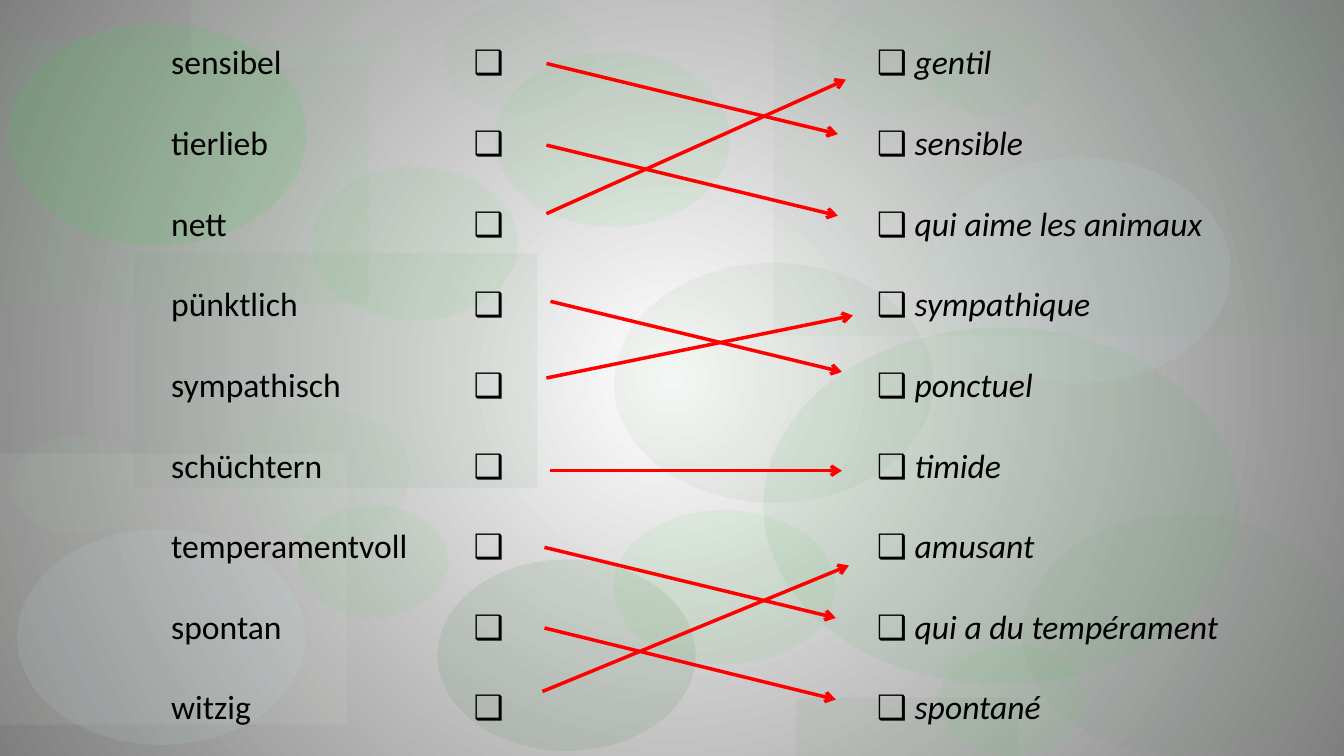
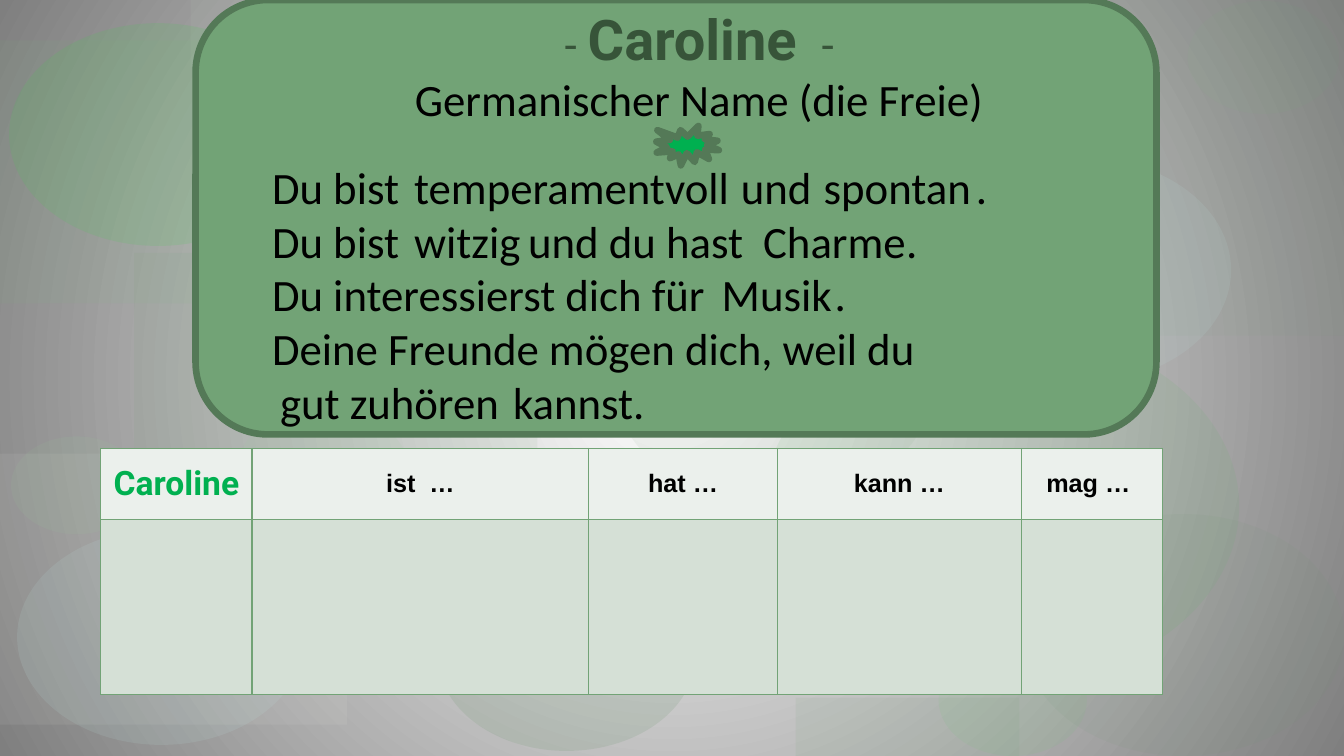
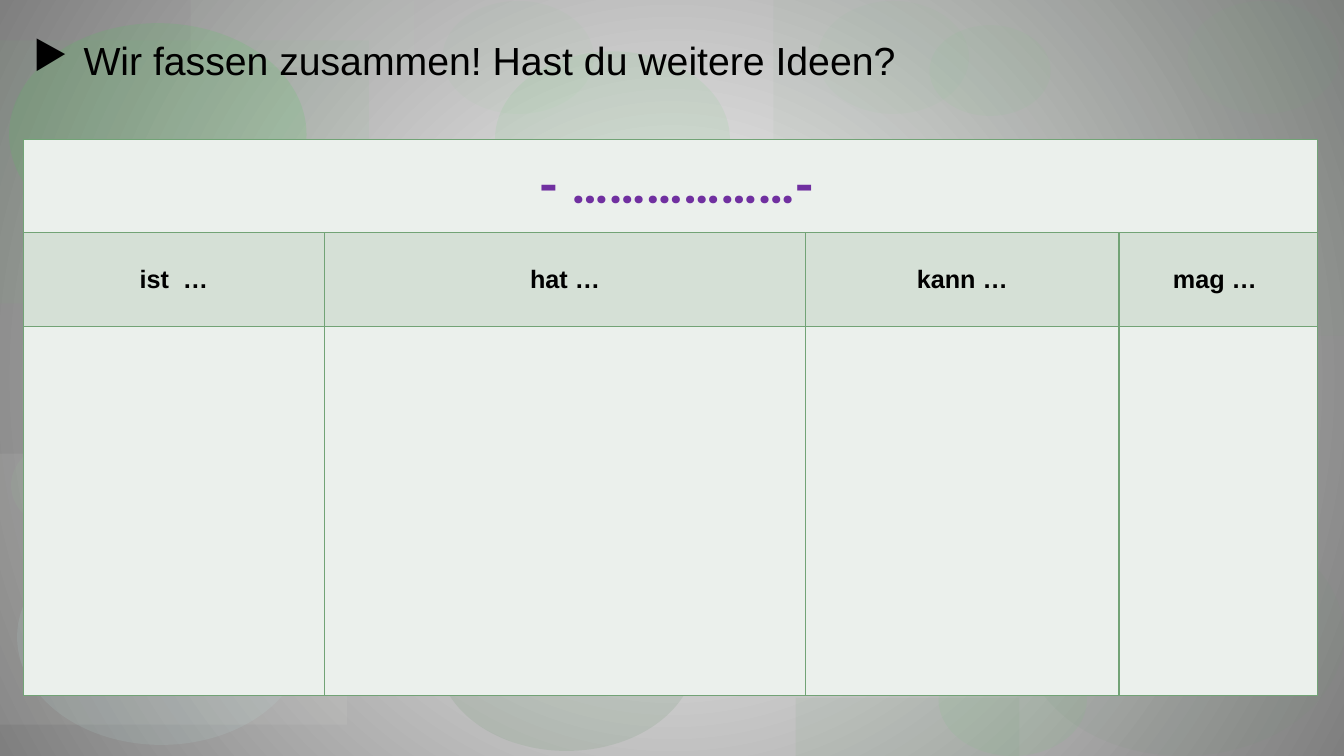
import dataclasses

import lxml.etree
import pptx
import pptx.dml.color
import pptx.enum.shapes
import pptx.enum.text
import pptx.oxml.ns
import pptx.util

EMU_PER_PX = 9144
SHAPES = pptx.enum.shapes.MSO_SHAPE
CENTER = pptx.enum.text.PP_ALIGN.CENTER


@dataclasses.dataclass(frozen=True)
class Style:
    """Look of one run of text."""
    size: int
    font: str
    color: str = "000000"
    bold: bool = False
    italic: bool = False


@dataclasses.dataclass(frozen=True)
class Para:
    """One paragraph: runs of (text, style), spacing in points, stops in px."""
    runs: tuple
    align: object = None
    after: float = 0
    stops: tuple = ()
    bullet: str = ""
    indent: int = 0


class Theme:
    """Colours and type sizes of the deck."""
    glow, shade = "FFFFFF", "7F7F7F"
    green, green_dark, seal = "72A376", "547957", "00B050"
    cell_light, cell_dark = "EBF0EC", "D5E0D6"
    arrow = "FF0000"
    arrow_width, outline_width, border_width = 2.5, 4.72, 1
    word = Style(24, "Calibri")
    translation = Style(24, "Calibri", italic=True)
    sentence = Style(32, "Calibri")
    dash = Style(32, "Calibri", "375439")
    name = Style(40, "Roboto", "375439", bold=True)
    table_name = Style(24, "Roboto", "00B050", bold=True)
    blank_name = Style(36, "Roboto", "7030A0", bold=True)
    column_head = Style(18, "Arial", bold=True)
    task = Style(28, "Arial")


BACKDROP = (
    ("rect", 133, 251, 400, 233, "72A376", 9),
    ("oval", 434, 555, 256, 190, "548958", 13),
    ("rect", 767, 0, 566, 333, "72A376", 6),
    ("rect", 0, 450, 344, 269, "F3F3EC", 8),
    ("oval", 609, 261, 317, 238, "709873", 8),
    ("oval", 931, 639, 147, 111, "68D070", 9),
    ("oval", 922, 156, 299, 224, "C1E8E4", 11),
    ("oval", 17, 525, 286, 214, "C1E8E4", 12),
    ("oval", 295, 501, 150, 112, "68D070", 9),
    ("oval", 608, 506, 221, 153, "47CE52", 8),
    ("rect", 0, 40, 366, 261, "77C27C", 7),
    ("rect", 189, 0, 222, 67, "BCCEBD", 10),
    ("oval", 9, 23, 295, 221, "47CE52", 15),
    ("oval", 11, 433, 130, 97, "98CD9C", 10),
    ("oval", 309, 165, 205, 153, "68D070", 9),
    ("oval", 491, 51, 233, 174, "47CE52", 8),
    ("oval", 757, 325, 472, 354, "5EB766", 10),
    ("oval", 811, 1, 150, 112, "68D070", 4),
    ("oval", 1014, 510, 319, 240, "709873", 8),
    ("oval", 233, 405, 174, 131, "98CD9C", 10),
    ("oval", 922, 25, 120, 90, "68D070", 6),
    ("oval", 1178, 1, 150, 112, "68D070", 4),
    ("rect", 789, 692, 222, 58, "72A376", 10),
    ("oval", 439, 1, 150, 112, "68D070", 4),
)
WORD_PAIRS = (
    ("sensibel", "gentil"),
    ("tierlieb", "sensible"),
    ("nett", "qui aime les animaux"),
    ("pünktlich", "sympathique"),
    ("sympathisch", "ponctuel"),
    ("schüchtern", "timide"),
    ("temperamentvoll", "amusant"),
    ("spontan", "qui a du tempérament"),
    ("witzig", "spontané"),
)
MATCHES = (
    (542, 63, 831, 133), (542, 144, 831, 214), (542, 212, 839, 79),
    (546, 299, 835, 369), (542, 375, 846, 313), (546, 467, 835, 467),
    (540, 543, 829, 613), (540, 623, 829, 694), (538, 686, 842, 561),
)
SENTENCES = (
    ("Du bist\tund\t.", (465, 698)),
    ("Du bist\tund du hast\t.", (254, 629)),
    ("Du interessierst dich für\t.", (558,)),
    ("Deine Freunde mögen dich, weil du", ()),
    ("\tkannst.", (239,)),
)
ANSWERS = (
    ("gut zuhören", 268, 367, 250), ("temperamentvoll", 401, 154, 367),
    ("spontan", 807, 154, 172), ("witzig", 401, 207, 141),
    ("Charme", 747, 207, 172), ("Musik", 706, 260, 141),
)
TRAIT_HEADS = ("ist  …", "hat …", "kann …", "mag … ")


def px(length):
    """Turn px into EMU."""
    return pptx.util.Emu(length * EMU_PER_PX)


def rgb(color):
    """Turn a hex string into a colour."""
    return pptx.dml.color.RGBColor.from_string(color)


def child(parent, tag, **attributes):
    """Append an XML element to parent."""
    return lxml.etree.SubElement(parent, pptx.oxml.ns.qn(tag), attributes)


class Deck:
    """Holds the theme, the presentation and the current slide."""

    def __init__(self, theme):
        self.theme = theme
        self.presentation = pptx.Presentation()
        self.presentation.slide_width = px(1333)
        self.presentation.slide_height = px(750)
        self.slide = None

    def new_slide(self):
        """Start a blank slide."""
        self.slide = self.presentation.slides.add_slide(self.presentation.slide_layouts[6])

    def backdrop(self, spots):
        """Put the gradient and the pale spots on the slide master."""
        master = self.presentation.slide_master
        gradient = master.background.fill
        gradient.gradient()
        for stop, position, color in zip(gradient.gradient_stops, (0, 1),
                                         (self.theme.glow, self.theme.shade)):
            stop.position = position
            stop.color.rgb = rgb(color)
        linear = master.element.xpath(".//p:bg//a:lin")[0]
        radial = child(linear.getparent(), "a:path", path="circle")
        child(radial, "a:fillToRect", l="50000", t="50000", r="50000", b="50000")
        linear.getparent().replace(linear, radial)
        kinds = {"rect": SHAPES.RECTANGLE, "oval": SHAPES.OVAL}
        for number, (kind, left, top, width, height, color, opacity) in enumerate(spots, 100):
            spot = self.shape(kinds[kind], (left, top, width, height), color).element
            child(spot.xpath("./p:spPr/a:solidFill/a:srgbClr")[0], "a:alpha", val=str(opacity * 1000))
            spot.nvSpPr.cNvPr.set("id", str(number))
            master.element.cSld.spTree.append(spot)

    def shape(self, kind, box, fill, outline=None):
        """Add a filled preset shape."""
        shape = self.slide.shapes.add_shape(kind, *map(px, box))
        shape.shadow.inherit = False
        shape.fill.solid()
        shape.fill.fore_color.rgb = rgb(fill)
        if outline:
            shape.line.color.rgb = rgb(outline)
            shape.line.width = pptx.util.Pt(self.theme.outline_width)
        else:
            shape.line.fill.background()
        return shape

    def arrow(self, x1, y1, x2, y2):
        """Add a straight arrow."""
        arrow = self.slide.shapes.add_connector(
            pptx.enum.shapes.MSO_CONNECTOR.STRAIGHT, *map(px, (x1, y1, x2, y2)))
        arrow.line.color.rgb = rgb(self.theme.arrow)
        arrow.line.width = pptx.util.Pt(self.theme.arrow_width)
        child(arrow.element.xpath("./p:spPr/a:ln")[0], "a:tailEnd", type="arrow")
        child(arrow.element.spPr, "a:effectLst")

    def fill_frame(self, frame, paras):
        """Fill a text frame with paragraphs."""
        for index, para in enumerate(paras):
            paragraph = frame.add_paragraph() if index else frame.paragraphs[0]
            paragraph.alignment = para.align
            paragraph.space_before = pptx.util.Pt(0)
            paragraph.space_after = pptx.util.Pt(para.after)
            properties = paragraph._p.get_or_add_pPr()
            if para.bullet:
                properties.set("marL", str(px(para.indent)))
                properties.set("indent", str(px(-para.indent)))
                child(properties, "a:buChar", char=para.bullet)
            if para.stops:
                tabs = child(properties, "a:tabLst")
                for stop in para.stops:
                    child(tabs, "a:tab", pos=str(px(stop)), algn="l")
            for words, style in para.runs:
                run = paragraph.add_run()
                run.text = words
                run.font.size = pptx.util.Pt(style.size)
                run.font.name = style.font
                run.font.color.rgb = rgb(style.color)
                run.font.bold = style.bold
                run.font.italic = style.italic

    def text(self, box, paras):
        """Add a wrapping text box."""
        frame = self.slide.shapes.add_textbox(*map(px, box)).text_frame
        frame.word_wrap = True
        self.fill_frame(frame, paras)

    def table(self, left, top, widths, heights, fills, heads):
        """Add a bordered table; heads holds rows of (text, style)."""
        holder = self.slide.shapes.add_table(
            len(heights), len(widths), px(left), px(top), px(sum(widths)), px(sum(heights)))
        table = holder.table
        for column, width in zip(table.columns, widths):
            column.width = px(width)
        for row, height, fill in zip(table.rows, heights, fills):
            row.height = px(height)
            for cell in row.cells:
                cell.fill.solid()
                cell.fill.fore_color.rgb = rgb(fill)
                cell.vertical_anchor = pptx.enum.text.MSO_ANCHOR.MIDDLE
        for properties in holder.element.xpath(".//a:tcPr"):
            for index, side in enumerate(("a:lnL", "a:lnR", "a:lnT", "a:lnB")):
                border = child(properties, side, w=str(pptx.util.Pt(self.theme.border_width)))
                child(child(border, "a:solidFill"), "a:srgbClr", val=self.theme.green)
                properties.insert(index, border)
        for row, head in enumerate(heads):
            for column, run in enumerate(head):
                self.fill_frame(table.cell(row, column).text_frame, [Para((run,), CENTER)])
        return table


def matching_slide(deck):
    """German words matched with French ones."""
    theme = deck.theme
    deck.text((60, 36, 1213, 714), [
        Para(((f"\t{german}\t❑\t❑ ", theme.word), (french, theme.translation)),
             after=28.8, stops=(100, 400, 800))
        for german, french in WORD_PAIRS])
    for match in MATCHES:
        deck.arrow(*match)


def portrait_slide(deck, trait_heads):
    """Portrait of Caroline with a table to fill in."""
    theme = deck.theme
    deck.shape(SHAPES.ROUNDED_RECTANGLE, (194, 0, 953, 431), theme.green, theme.green_dark)
    title = Para((("- ", theme.dash), ("Caroline ", theme.name), (" -", theme.dash)), CENTER)
    origin = Para((("Germanischer Name (die Freie)", theme.sentence),), CENTER, after=24)
    sentences = [Para(((words, theme.sentence),), stops=stops) for words, stops in SENTENCES]
    deck.text((260, 0, 867, 434), [title, origin, *sentences])
    deck.shape(SHAPES.EXPLOSION1, (651, 125, 62, 39), theme.seal, theme.green_dark)
    deck.table(100, 445, (150, 334, 187, 242, 140), (70, 174),
               (theme.cell_light, theme.cell_dark),
               [[("Caroline", theme.table_name), *trait_heads]])
    for answer, left, top, width in ANSWERS:
        deck.text((left, top, width, 64), [Para(((answer, theme.sentence),))])


def summary_slide(deck, trait_heads):
    """Empty summary table with the task above it."""
    theme = deck.theme
    summary = deck.table(23, 138, (299, 477, 311, 197), (93, 93, 366),
                         (theme.cell_light, theme.cell_dark, theme.cell_light),
                         [[(" - ………………-", theme.blank_name)], trait_heads])
    summary.cell(0, 0).merge(summary.cell(0, 3))
    deck.text((23, 31, 1061, 57), [
        Para((("Wir fassen zusammen! Hast du weitere Ideen?", theme.task),),
             bullet="▶", indent=50)])


def main():
    """Build and save the deck."""
    deck = Deck(Theme())
    trait_heads = [(head, deck.theme.column_head) for head in TRAIT_HEADS]
    deck.new_slide()
    deck.backdrop(BACKDROP)
    matching_slide(deck)
    deck.new_slide()
    portrait_slide(deck, trait_heads)
    deck.new_slide()
    summary_slide(deck, trait_heads)
    deck.presentation.save("out.pptx")


if __name__ == "__main__":
    main()
